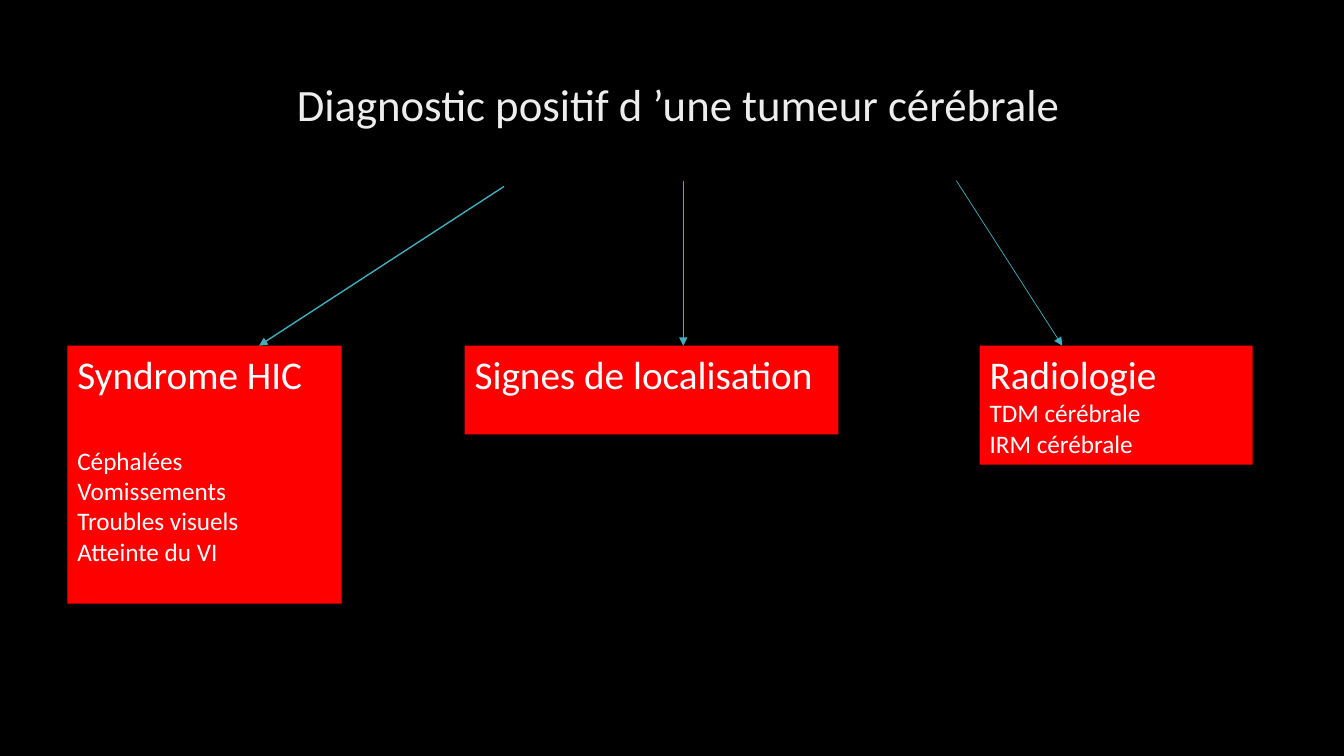
from lxml.etree import SubElement
from pptx import Presentation
from pptx.dml.color import RGBColor
from pptx.enum.shapes import MSO_CONNECTOR as Connector, MSO_SHAPE as Shape
from pptx.enum.text import MSO_ANCHOR as Anchor, PP_ALIGN as Align
from pptx.oxml.ns import qn
from pptx.util import Cm, Pt

FONT = "Calibri"
BOX_TOP = 8.71

# left, width, height, heading, items, gap in points above the items
BOXES = [
    (1.7, 6.91, 6.5, "Syndrome HIC",
     ["Céphalées", "Vomissements", "Troubles visuels", "Atteinte du VI"], 34),
    (11.71, 9.42, 2.24, "Signes de localisation", [], 0),
    (24.69, 6.88, 3, "Radiologie", ["TDM cérébrale", "IRM cérébrale"], 0),
]

# start x, start y, end x, line width in points
ARROWS = [(12.7, 4.7, 6.53, 1), (17.22, 4.55, 17.22, 0.5), (24.1, 4.55, 26.77, 0.5)]


def paint(colour_format, colour):
    colour_format.rgb = RGBColor.from_string(colour)


def style(paragraph, size, colour, align=Align.LEFT):
    paragraph.alignment = align
    paragraph.font.name = FONT
    paragraph.font.size = Pt(size)
    paint(paragraph.font.color, colour)


def add_title(slide, text):
    title = slide.shapes.title
    title.left, title.top, title.width, title.height = Cm(2.62), Cm(0.86), Cm(29.21), Cm(3.68)
    title.text_frame.vertical_anchor = Anchor.MIDDLE
    title.text_frame.text = text
    heading = title.text_frame.paragraphs[0]
    heading.line_spacing = 0.9
    style(heading, 32, "EDEDED", Align.CENTER)


def add_box(slide, left, width, height, heading, items, gap):
    box = slide.shapes.add_shape(Shape.RECTANGLE, Cm(left), Cm(BOX_TOP), Cm(width), Cm(height))
    box.shadow.inherit = False
    box.fill.solid()
    paint(box.fill.fore_color, "FF0000")
    box.line.fill.background()
    frame = box.text_frame
    frame.word_wrap = True
    frame.vertical_anchor = Anchor.TOP
    frame.text = "\n".join([heading, *items])
    first, *rest = frame.paragraphs
    style(first, 28, "FFFFFF")
    for item in rest:
        style(item, 18, "FFFFFF")
    if gap:
        rest[0].space_before = Pt(gap)


def add_arrow(slide, start_x, start_y, end_x, width):
    arrow = slide.shapes.add_connector(
        Connector.STRAIGHT, Cm(start_x), Cm(start_y), Cm(end_x), Cm(BOX_TOP))
    paint(arrow.line.color, "41AEBD")
    arrow.line.width = Pt(width)
    SubElement(arrow.line._get_or_add_ln(), qn("a:tailEnd"), type="triangle")
    SubElement(arrow._element.spPr, qn("a:effectLst"))


def main():
    deck = Presentation()
    deck.slide_width, deck.slide_height = Cm(33.87), Cm(19.05)
    slide = deck.slides.add_slide(deck.slide_layouts[5])
    slide.background.fill.solid()
    paint(slide.background.fill.fore_color, "000000")

    # Title
    add_title(slide, "Diagnostic positif d ’une tumeur cérébrale ")

    # The three bases of the diagnosis
    for box in BOXES:
        add_box(slide, *box)

    # Arrows from the title to the boxes
    for arrow in ARROWS:
        add_arrow(slide, *arrow)

    deck.save("out.pptx")


if __name__ == "__main__":
    main()
